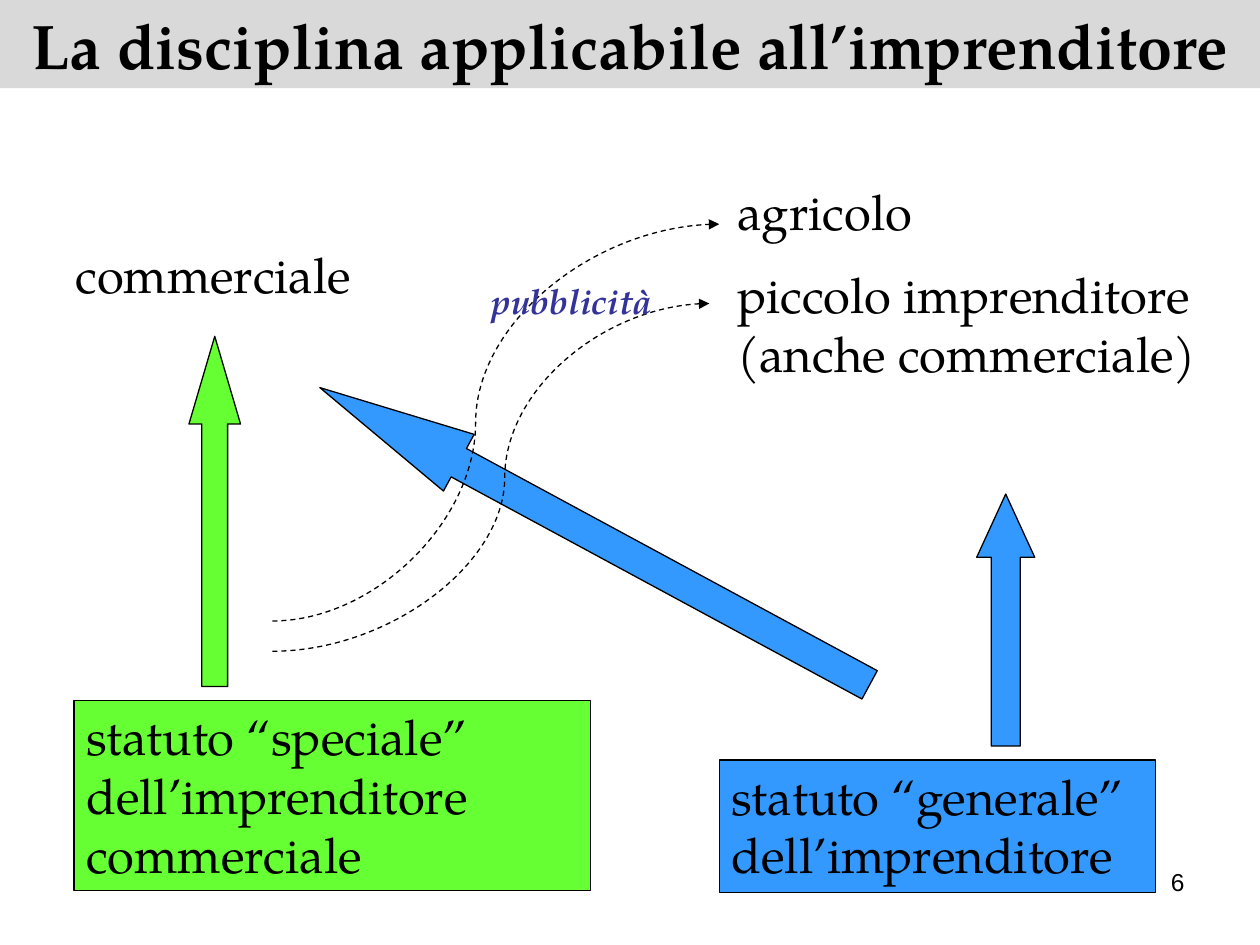
from dataclasses import dataclass

from lxml import etree
from pptx import Presentation
from pptx import util as u
from pptx.dml.color import RGBColor
from pptx.enum import dml, shapes, text
from pptx.oxml.ns import qn


@dataclass(frozen=True)
class Theme:
    serif: str = "TeX Gyre Pagella"
    sans: str = "Arial"
    black: RGBColor = RGBColor(0, 0, 0)
    band: RGBColor = RGBColor(0xD9, 0xD9, 0xD9)
    blue: RGBColor = RGBColor(0x33, 0x99, 0xFF)
    green: RGBColor = RGBColor(0x66, 0xFF, 0x33)
    indigo: RGBColor = RGBColor(0x33, 0x33, 0x99)
    title: int = 36
    body: int = 28
    label: int = 20
    number: int = 14
    outline: float = 0.75


theme = Theme()
LEFT, CENTER, RIGHT = text.PP_ALIGN.LEFT, text.PP_ALIGN.CENTER, text.PP_ALIGN.RIGHT

deck = Presentation()
deck.slide_width, deck.slide_height = u.Cm(25.4), u.Cm(19.05)
page = deck.slides.add_slide(deck.slide_layouts[6])


def add_text(content, at, fill=None, outlined=False, size=theme.body, font=theme.serif,
             color=theme.black, bold=False, italic=False, align=LEFT, leading=None):
    frame = [u.Cm(length) for length in at]
    if fill is None:
        box = page.shapes.add_textbox(*frame)
    else:
        box = add_block(shapes.MSO_SHAPE.RECTANGLE, at, fill, outlined)
    body = box.text_frame
    body.word_wrap = True
    body.vertical_anchor = text.MSO_ANCHOR.TOP
    body.text = content
    for index, para in enumerate(body.paragraphs):
        para.alignment = align
        para.space_before = u.Pt(size / 2 if index else 0)
        if leading:
            para.line_spacing = u.Pt(leading)
        for span in para.runs:
            span.font.name, span.font.size = font, u.Pt(size)
            span.font.bold, span.font.italic = bold, italic
            span.font.color.rgb = color


def add_block(kind, at, fill, outlined=True):
    block = page.shapes.add_shape(kind, *[u.Cm(length) for length in at])
    block.shadow.inherit = False
    block.fill.solid()
    block.fill.fore_color.rgb = fill
    if outlined:
        block.line.color.rgb = theme.black
        block.line.width = u.Pt(theme.outline)
    else:
        block.line.fill.background()
    return block


add_text("6", (18.21, 17.35, 5.92, 1.32), size=theme.number, font=theme.sans, align=RIGHT)
add_text("La disciplina applicabile all’imprenditore", (0, 0, 25.4, 1.78),
         fill=theme.band, size=theme.title, bold=True, align=CENTER)
add_text("commerciale", (1.27, 5.28, 6.35, 0.97), leading=20)
add_text("agricolo\npiccolo imprenditore (anche commerciale)", (14.61, 3.53, 9.91, 4.42))
add_text("statuto “generale” dell’imprenditore", (14.5, 15.32, 8.79, 2.67),
         fill=theme.blue, outlined=True)
add_text("statuto “speciale” dell’imprenditore commerciale", (1.49, 14.12, 10.41, 3.84),
         fill=theme.green, outlined=True)

UP, BACK = shapes.MSO_SHAPE.UP_ARROW, shapes.MSO_SHAPE.LEFT_ARROW
for kind, at, fill, head, angle in (
    (UP, (3.81, 6.78, 1.04, 7.06), theme.green, 1.7, 0),
    (UP, (19.69, 9.96, 1.17, 5.08), theme.blue, 1.09, 0),
    (BACK, (5.69, 10.16, 12.6, 1.3), theme.blue, 2.45, 28.4),
):
    arrow = add_block(kind, at, fill)
    arrow.adjustments[0], arrow.adjustments[1] = 0.5, head
    arrow.rotation = angle

for ends, bend in (
    ((5.49, 12.52, 14.5, 4.52), 45500),
    ((5.49, 13.13, 14.3, 6.12), 53200),
):
    curve = page.shapes.add_connector(shapes.MSO_CONNECTOR.CURVE, *[u.Cm(end) for end in ends])
    curve.line.color.rgb = theme.black
    curve.line.width = u.Pt(theme.outline)
    curve.line.dash_style = dml.MSO_LINE.DASH
    etree.SubElement(curve.line._get_or_add_ln(), qn("a:tailEnd"), type="triangle")
    properties = curve._element.spPr
    etree.SubElement(properties, qn("a:effectLst"))
    guides = properties.find(qn("a:prstGeom")).get_or_add_avLst()
    etree.SubElement(guides, qn("a:gd"), name="adj1", fmla=f"val {bend}")

add_text("pubblicità", (9.53, 5.51, 4.01, 1.09), size=theme.label,
         color=theme.indigo, bold=True, italic=True, align=CENTER)

deck.save("out.pptx")
